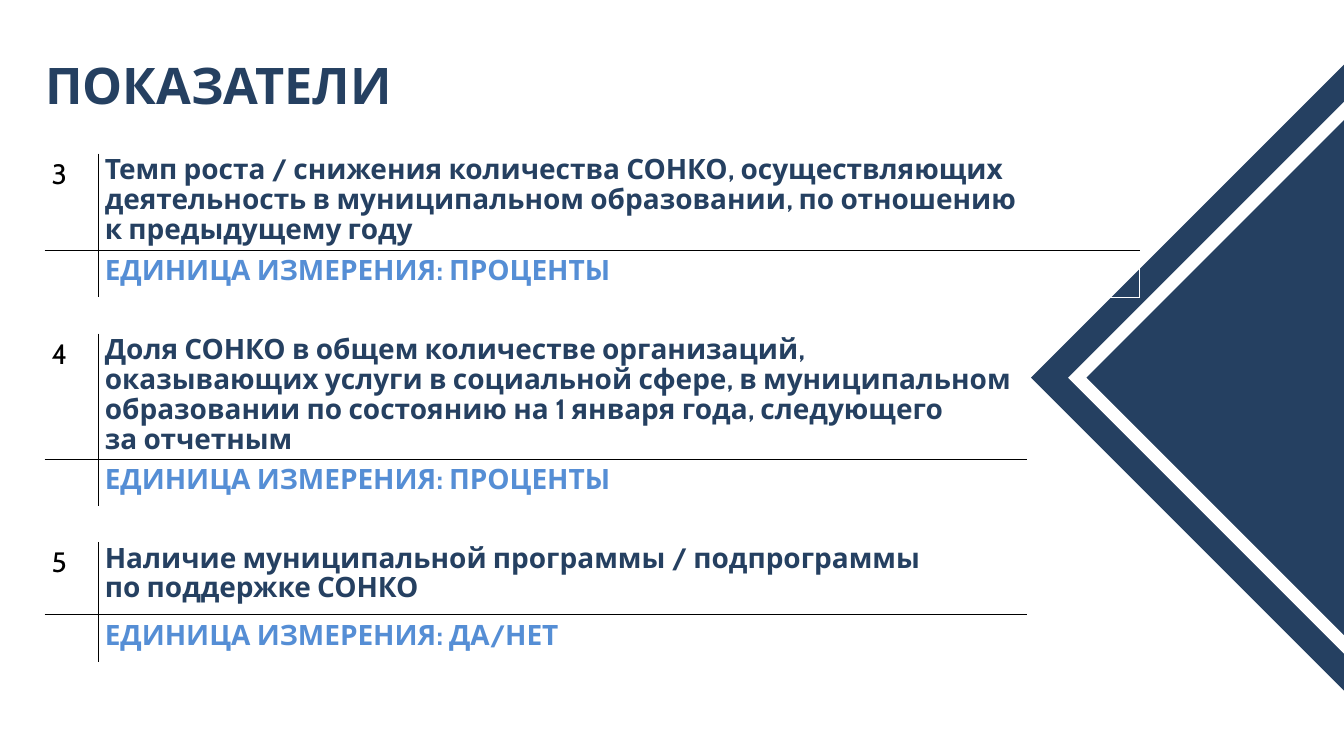
"""Build the slide that lists indicators 3 to 5 and their units of measurement."""
import lxml.etree
import pptx
import pptx.dml.color
import pptx.enum.shapes
import pptx.enum.text
import pptx.oxml.ns
import pptx.util
from pptx.util import Inches

NAVY, BLUE, BLACK, WHITE = "254061", "558ED5", "000000", "FFFFFF"


def color(value):
    return pptx.dml.color.RGBColor.from_string(value)


class SlideBuilder:
    font = "Cabin"
    text_size = 30
    line_spacing = 31.8
    left = 0.67
    number_width = 0.79
    unit_height = 0.7

    def __init__(self, slide):
        self.slide = slide

    def add_text(self, paragraph, text, hue, size=text_size, bold=True, spacing=None):
        run = paragraph.add_run()
        run.text = text
        run.font.name = self.font
        run.font.size = pptx.util.Pt(size)
        run.font.bold = bold
        run.font.color.rgb = color(hue)
        if spacing:
            paragraph.line_spacing = pptx.util.Pt(spacing)

    def title(self, text, left, top, width, height):
        shape = self.slide.shapes.title
        shape.left, shape.top = Inches(left), Inches(top)
        shape.width, shape.height = Inches(width), Inches(height)
        frame = shape.text_frame
        frame.margin_left = frame.margin_right = frame.margin_top = frame.margin_bottom = 0
        frame.word_wrap = True
        frame.auto_size = pptx.enum.text.MSO_AUTO_SIZE.SHAPE_TO_FIT_TEXT
        frame.vertical_anchor = pptx.enum.text.MSO_ANCHOR.TOP
        paragraph = frame.paragraphs[0]
        paragraph.alignment = pptx.enum.text.PP_ALIGN.LEFT
        self.add_text(paragraph, text, NAVY, size=54, spacing=68.2)

    def turned_square(self, kind, left, top, side, rotation, hue):
        shape = self.slide.shapes.add_shape(
            kind, Inches(left), Inches(top), Inches(side), Inches(side))
        shape.rotation = rotation
        shape.shadow.inherit = False
        shape.fill.solid()
        shape.fill.fore_color.rgb = color(hue)
        shape.line.fill.background()
        return shape

    def borders(self, cell, sides):
        properties = cell._tc.get_or_add_tcPr()
        for side in sides:
            line = lxml.etree.SubElement(
                properties, pptx.oxml.ns.qn(f"a:ln{side}"), w=str(pptx.util.Pt(1)))
            fill = lxml.etree.SubElement(line, pptx.oxml.ns.qn("a:solidFill"))
            lxml.etree.SubElement(fill, pptx.oxml.ns.qn("a:srgbClr"), val=BLACK)

    def indicator(self, number, lines, unit, top, width, height):
        table = self.slide.shapes.add_table(
            2, 2, Inches(self.left), Inches(top), Inches(width),
            Inches(height + self.unit_height)).table
        table.first_row = table.horz_banding = False
        for column, size in zip(table.columns, (self.number_width, width - self.number_width)):
            column.width = Inches(size)
        for row, size in zip(table.rows, (height, self.unit_height)):
            row.height = Inches(size)
        for cell, sides in zip(table.iter_cells(), ("RB", "LB", "RT", "LT")):
            self.borders(cell, sides)
            cell.fill.background()

        self.add_text(table.cell(0, 0).text_frame.paragraphs[0], number, BLACK, bold=False)
        frame = table.cell(0, 1).text_frame
        for index, line in enumerate(lines):
            paragraph = frame.add_paragraph() if index else frame.paragraphs[0]
            self.add_text(paragraph, line, NAVY, spacing=self.line_spacing)
        self.add_text(table.cell(1, 1).text_frame.paragraphs[0],
                      f"ЕДИНИЦА ИЗМЕРЕНИЯ: {unit}", BLUE)


def main():
    presentation = pptx.Presentation()
    presentation.slide_width, presentation.slide_height = Inches(20), Inches(11.25)
    builder = SlideBuilder(presentation.slides.add_slide(presentation.slide_layouts[5]))

    shapes = pptx.enum.shapes.MSO_SHAPE
    builder.turned_square(shapes.RECTANGLE, 16.83, 2.03, 7.18, 315, NAVY)
    frame = builder.turned_square(shapes.FRAME, 17.22, 2.42, 6.4, 45, WHITE)
    frame.adjustments[0] = 0.03

    builder.title("ПОКАЗАТЕЛИ", builder.left, 0.76, 7.68, 0.87)

    indicators = [
        ("3", ["Темп роста / снижения количества СОНКО, осуществляющих деятельность "
               "в муниципальном образовании, по отношению", "к предыдущему году"],
         "ПРОЦЕНТЫ", 2.29, 16.29, 1.44),
        ("4", ["Доля СОНКО в общем количестве организаций, оказывающих услуги "
               "в социальной сфере, в муниципальном образовании по состоянию "
               "на 1 января года, следующего", "за отчетным"],
         "ПРОЦЕНТЫ", 4.97, 14.6, 1.87),
        ("5", ["Наличие муниципальной программы / подпрограммы", "по поддержке СОНКО"],
         "ДА/НЕТ", 8.07, 14.6, 1.08),
    ]
    for indicator in indicators:
        builder.indicator(*indicator)

    presentation.save("out.pptx")


if __name__ == "__main__":
    main()
